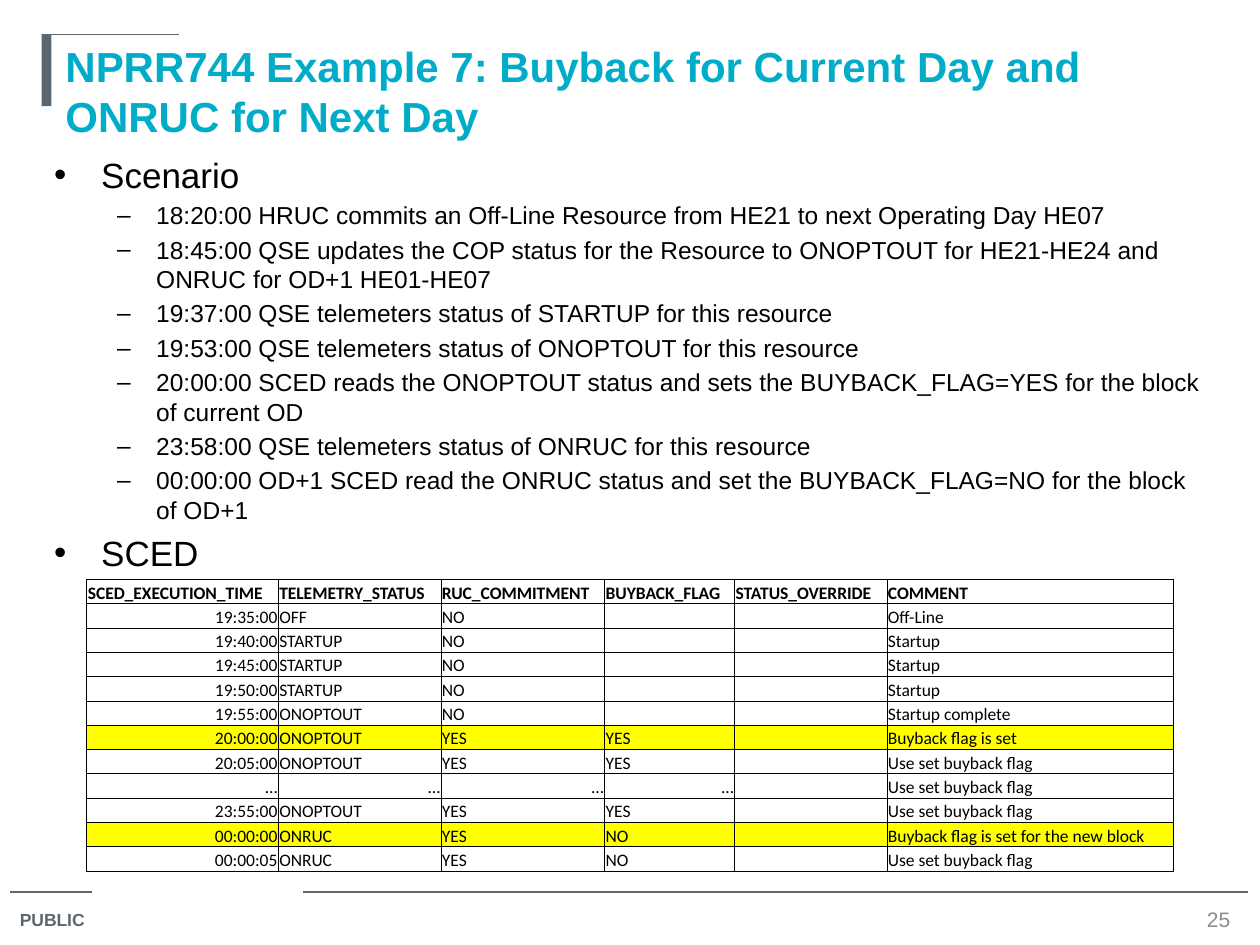
from lxml import etree
from pptx import Presentation
from pptx.dml.color import RGBColor
from pptx.enum.shapes import MSO_CONNECTOR, MSO_SHAPE
from pptx.enum.text import MSO_ANCHOR, PP_ALIGN
from pptx.oxml.ns import qn
from pptx.util import Cm, Pt

STRAIGHT = MSO_CONNECTOR.STRAIGHT
RECTANGLE = MSO_SHAPE.RECTANGLE
TOP, MIDDLE, BOTTOM = MSO_ANCHOR.TOP, MSO_ANCHOR.MIDDLE, MSO_ANCHOR.BOTTOM
LEFT, CENTER, RIGHT = PP_ALIGN.LEFT, PP_ALIGN.CENTER, PP_ALIGN.RIGHT

SLATE = RGBColor(0x5B, 0x67, 0x70)
TEAL = RGBColor(0x00, 0xAC, 0xC8)
GRAY = RGBColor(0x8C, 0x8C, 0x8C)
BLACK = RGBColor(0x00, 0x00, 0x00)
YELLOW = RGBColor(0xFF, 0xFF, 0x00)

TITLE = "NPRR744 Example 7: Buyback for Current Day and ONRUC for Next Day"
OUTLINE = [
    (0, "Scenario"),
    (1, "18:20:00 HRUC commits an Off-Line Resource from HE21 to next Operating Day HE07"),
    (1, "18:45:00 QSE updates the COP status for the Resource to ONOPTOUT for HE21-HE24 "
        "and ONRUC for OD+1 HE01-HE07"),
    (1, "19:37:00 QSE telemeters status of STARTUP for this resource"),
    (1, "19:53:00 QSE telemeters status of ONOPTOUT for this resource"),
    (1, "20:00:00 SCED reads the ONOPTOUT status and sets the BUYBACK_FLAG=YES for the "
        "block of current OD"),
    (1, "23:58:00 QSE telemeters status of ONRUC for this resource"),
    (1, "00:00:00 OD+1 SCED read the ONRUC status and set the BUYBACK_FLAG=NO for the "
        "block of OD+1"),
    (0, "SCED"),
]
# bullet, font size in points, text indent, hanging indent
LEVELS = [("•", 20, Cm(0.95), Cm(0.95)), ("–", 14, Cm(2.06), Cm(0.79))]

SCED_ROWS = [
    ("SCED_EXECUTION_TIME", "TELEMETRY_STATUS", "RUC_COMMITMENT", "BUYBACK_FLAG",
     "STATUS_OVERRIDE", "COMMENT"),
    ("19:35:00", "OFF", "NO", "", "", "Off-Line"),
    ("19:40:00", "STARTUP", "NO", "", "", "Startup"),
    ("19:45:00", "STARTUP", "NO", "", "", "Startup"),
    ("19:50:00", "STARTUP", "NO", "", "", "Startup"),
    ("19:55:00", "ONOPTOUT", "NO", "", "", "Startup complete"),
    ("20:00:00", "ONOPTOUT", "YES", "YES", "", "Buyback flag is set"),
    ("20:05:00", "ONOPTOUT", "YES", "YES", "", "Use set buyback flag"),
    ("…", "…", "…", "…", "", "Use set buyback flag"),
    ("23:55:00", "ONOPTOUT", "YES", "YES", "", "Use set buyback flag"),
    ("00:00:00", "ONRUC", "YES", "NO", "", "Buyback flag is set for the new block"),
    ("00:00:05", "ONRUC", "YES", "NO", "", "Use set buyback flag"),
]
HIGHLIGHTED_TIMES = {"20:00:00", "00:00:00"}
COLUMN_WIDTHS = [Cm(3.86), Cm(3.28), Cm(3.3), Cm(2.62), Cm(3.07), Cm(5.77)]
ROW_HEIGHT = Cm(0.49)

# x1, y1, x2, y2
RULES = [
    (Cm(0.2), Cm(17.98), Cm(1.85), Cm(17.98)),
    (Cm(6.1), Cm(17.98), Cm(25.15), Cm(17.98)),
    (Cm(0.84), Cm(0.69), Cm(3.6), Cm(0.69)),
]


def style(paragraph, size, color, name="Arial", bold=False, align=LEFT):
    paragraph.alignment = align
    font = paragraph.font
    font.name, font.size, font.bold = name, Pt(size), bold
    font.color.rgb = color


def add_text_box(slide, box, anchor=TOP, wrap=True):
    frame = slide.shapes.add_textbox(*box).text_frame
    frame.word_wrap = wrap
    frame.vertical_anchor = anchor
    return frame


def add_label(slide, text, box, size, color, bold=False, align=LEFT, anchor=TOP, wrap=True):
    paragraph = add_text_box(slide, box, anchor, wrap).paragraphs[0]
    paragraph.text = text
    style(paragraph, size, color, bold=bold, align=align)


def add_rule(slide, ends):
    rule = slide.shapes.add_connector(STRAIGHT, *ends)
    rule.line.color.rgb = SLATE
    rule.line.width = Pt(0.75)
    etree.SubElement(rule._element.spPr, qn("a:effectLst"))


def add_outline(slide, box):
    frame = add_text_box(slide, box)
    for index, (level, text) in enumerate(OUTLINE):
        paragraph = frame.add_paragraph() if index else frame.paragraphs[0]
        paragraph.text = text
        paragraph.level = level
        bullet, size, indent, hanging = LEVELS[level]
        if index:
            paragraph.space_before = Pt(size * 0.2)
        properties = paragraph._p.get_or_add_pPr()
        properties.set("marL", str(indent))
        properties.set("indent", str(-hanging))
        etree.SubElement(properties, qn("a:buFont"), typeface="Arial")
        etree.SubElement(properties, qn("a:buChar"), char=bullet)
        style(paragraph, size, BLACK)


def add_borders(cell):
    properties = cell._tc.get_or_add_tcPr()
    for position, side in enumerate(("lnL", "lnR", "lnT", "lnB")):
        line = etree.Element(qn(f"a:{side}"), w=str(Pt(0.5)))
        fill = etree.SubElement(line, qn("a:solidFill"))
        etree.SubElement(fill, qn("a:srgbClr"), val=str(BLACK))
        properties.insert(position, line)


def add_sced_table(slide, left, top):
    table = slide.shapes.add_table(
        len(SCED_ROWS), len(COLUMN_WIDTHS), left, top,
        sum(COLUMN_WIDTHS), ROW_HEIGHT * len(SCED_ROWS)).table
    table.first_row = table.horz_banding = False
    for column, width in zip(table.columns, COLUMN_WIDTHS):
        column.width = width
    for row_index, values in enumerate(SCED_ROWS):
        table.rows[row_index].height = ROW_HEIGHT
        for column_index, value in enumerate(values):
            cell = table.cell(row_index, column_index)
            cell.margin_left = cell.margin_right = cell.margin_top = Cm(0.02)
            cell.margin_bottom = 0
            cell.vertical_anchor = BOTTOM
            if values[0] in HIGHLIGHTED_TIMES:
                cell.fill.solid()
                cell.fill.fore_color.rgb = YELLOW
            else:
                cell.fill.background()
            add_borders(cell)
            is_header = row_index == 0
            right_aligned = not is_header and (column_index == 0 or value == "…")
            paragraph = cell.text_frame.paragraphs[0]
            paragraph.text = value
            style(paragraph, 10, BLACK, "Calibri", is_header, RIGHT if right_aligned else LEFT)
            if not value:
                etree.SubElement(paragraph._p, qn("a:endParaRPr"), sz="1000")


def main():
    presentation = Presentation()
    presentation.slide_width, presentation.slide_height = Cm(25.4), Cm(19.05)
    slide = presentation.slides.add_slide(presentation.slide_layouts[6])

    for ends in RULES:
        add_rule(slide, ends)
    accent = slide.shapes.add_shape(RECTANGLE, Cm(0.84), Cm(0.69), Cm(0.2), Cm(1.45))
    accent.shadow.inherit = False
    accent.fill.solid()
    accent.fill.fore_color.rgb = SLATE
    accent.line.fill.background()

    add_label(slide, "PUBLIC", (Cm(0.15), Cm(18.21), Cm(1.96), Cm(0.7)), 10, SLATE,
              bold=True, wrap=False)
    add_label(slide, TITLE, (Cm(1.07), Cm(0.69), Cm(23.5), Cm(3.18)), 24, TEAL, bold=True)
    add_label(slide, "25", (Cm(23.93), Cm(18.24), Cm(1.27), Cm(0.58)), 12, GRAY,
              align=CENTER, anchor=MIDDLE)
    add_outline(slide, (Cm(0.84), Cm(2.97), Cm(23.7), Cm(7.77)))
    add_sced_table(slide, Cm(1.75), Cm(11.68))
    presentation.save("out.pptx")


if __name__ == "__main__":
    main()
